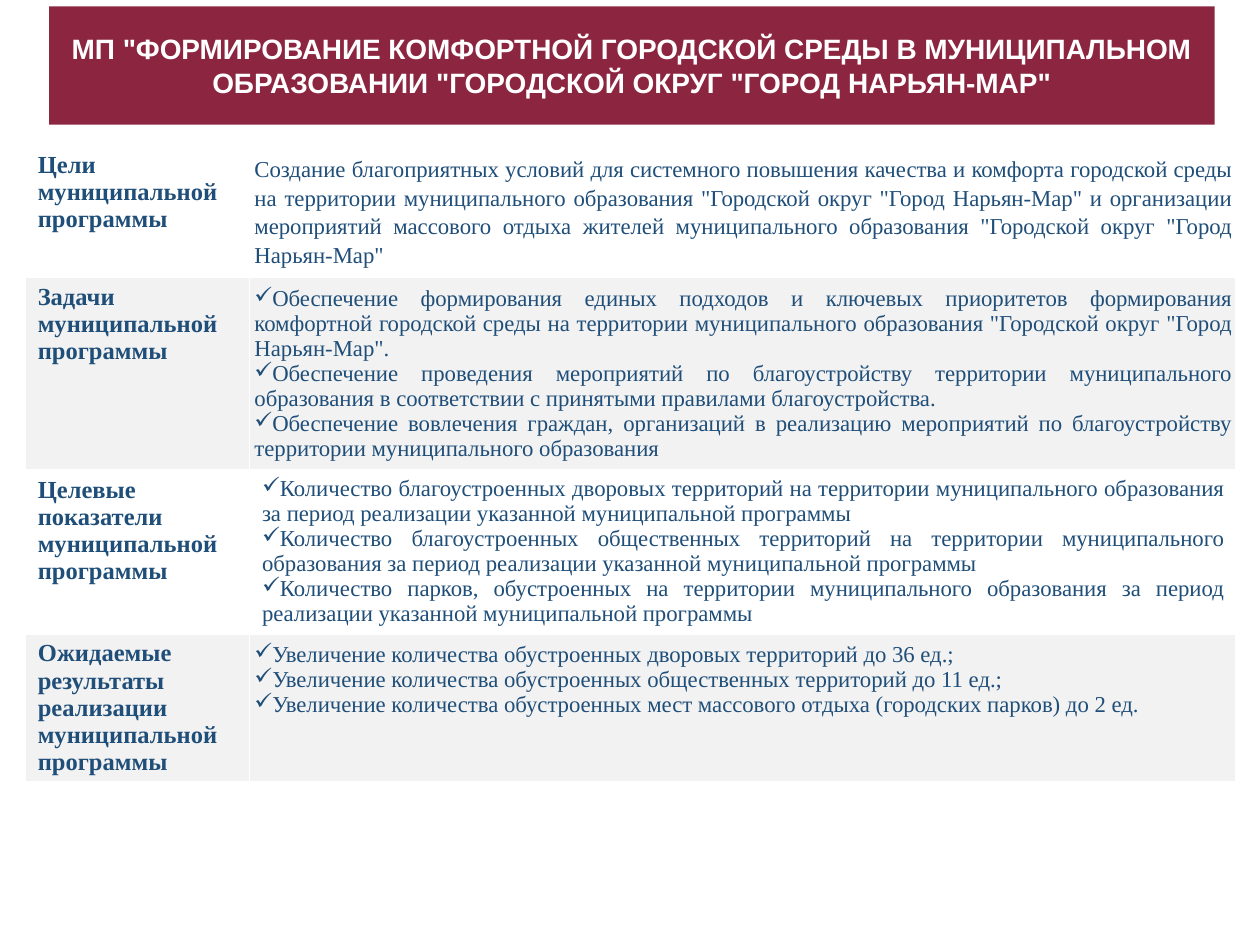
from dataclasses import dataclass

from pptx import Presentation
from pptx.dml.color import RGBColor as RGB
from pptx.enum.text import MSO_ANCHOR as Anchor, MSO_AUTO_SIZE as AutoSize, PP_ALIGN as Align
from pptx.oxml.ns import qn
from pptx.util import Inches, Pt
from lxml.etree import SubElement


@dataclass(frozen=True)
class Theme:
    """Colours, fonts and type sizes of the slide."""
    banner: str = "8C2540"
    white: str = "FFFFFF"
    band: str = "F2F2F2"
    ink: str = "1F4E79"
    title_font: str = "Arial"
    body_font: str = "Times New Roman"
    title_size: int = 16
    label_size: int = 14
    body_size: int = 13
    border: int = 1


class Deck:
    """Holds the theme and the current slide and adds elements to it."""

    def __init__(self, prs, theme):
        """Start a title-only slide."""
        self.theme = theme
        self.s = prs.slides.add_slide(prs.slide_layouts[5])

    def run(self, p, text, font, size, color, bold=False):
        """Add one styled run to a paragraph."""
        r = p.add_run()
        r.text = text
        r.font.name = font
        r.font.size = Pt(size)
        r.font.bold = bold
        r.font.color.rgb = RGB.from_string(color)

    def title(self, text, left, top, width, height):
        """Turn the title placeholder into a filled banner."""
        t = self.theme
        sp = self.s.shapes.title
        sp.left, sp.top, sp.width, sp.height = map(Inches, (left, top, width, height))
        sp.fill.solid()
        sp.fill.fore_color.rgb = RGB.from_string(t.banner)
        tf = sp.text_frame
        tf.word_wrap = True
        tf.auto_size = AutoSize.NONE
        tf.vertical_anchor = Anchor.MIDDLE
        p = tf.paragraphs[0]
        p.alignment = Align.CENTER
        self.run(p, text, t.title_font, t.title_size, t.white, True)

    def borders(self, cell):
        """Draw thin lines on all four sides of a cell."""
        pr = cell._tc.get_or_add_tcPr()
        for i, side in enumerate(("a:lnL", "a:lnR", "a:lnT", "a:lnB")):
            ln = SubElement(pr, qn(side), w=str(Pt(self.theme.border)))
            pr.insert(i, ln)
            fill = SubElement(ln, qn("a:solidFill"))
            SubElement(fill, qn("a:srgbClr"), val=self.theme.white)

    def bullet(self, p):
        """Give a paragraph a check mark with no hanging indent."""
        pr = p._p.get_or_add_pPr()
        pr.set("marL", "0")
        pr.set("indent", "0")
        SubElement(pr, qn("a:buChar"), char="✓")

    def label(self, cell, text):
        """Write the bold heading of a row."""
        t = self.theme
        self.run(cell.text_frame.paragraphs[0], text, t.body_font, t.label_size, t.ink, True)

    def body(self, cell, items, bulleted, tight):
        """Write the justified paragraphs of a row."""
        t = self.theme
        if tight:
            cell.margin_left = cell.margin_right = Inches(0.04)
            cell.margin_top = cell.margin_bottom = Inches(0.07)
        tf = cell.text_frame
        for i, text in enumerate(items):
            p = tf.add_paragraph() if i else tf.paragraphs[0]
            p.alignment = Align.JUSTIFY
            if bulleted:
                self.bullet(p)
            else:
                p.line_spacing = 1.15
            self.run(p, text, t.body_font, t.body_size, t.ink)

    def table(self, rows, left, top, widths, heights):
        """Add the two-column table with alternating row fills."""
        t = self.theme
        size = map(Inches, (left, top, sum(widths), sum(heights)))
        tbl = self.s.shapes.add_table(len(rows), len(widths), *size).table
        for col, width in zip(tbl.columns, widths):
            col.width = Inches(width)
        for i, (row, height, (label, items, bulleted, tight)) in enumerate(zip(tbl.rows, heights, rows)):
            row.height = Inches(height)
            for cell in row.cells:
                cell.fill.solid()
                cell.fill.fore_color.rgb = RGB.from_string(t.band if i % 2 else t.white)
                self.borders(cell)
            self.label(row.cells[0], label)
            self.body(row.cells[1], items, bulleted, tight)


TITLE = ('МП "ФОРМИРОВАНИЕ КОМФОРТНОЙ ГОРОДСКОЙ СРЕДЫ В МУНИЦИПАЛЬНОМ '
         'ОБРАЗОВАНИИ "ГОРОДСКОЙ ОКРУГ "ГОРОД НАРЬЯН-МАР"')

ROWS = [
    ("Цели муниципальной программы", [
        'Создание благоприятных условий для системного повышения качества и комфорта городской среды '
        'на территории муниципального образования "Городской округ "Город Нарьян-Мар" и организации '
        'мероприятий массового отдыха жителей муниципального образования "Городской округ "Город '
        'Нарьян-Мар"',
    ], False, True),
    ("Задачи муниципальной программы", [
        'Обеспечение формирования единых подходов и ключевых приоритетов формирования комфортной '
        'городской среды на территории муниципального образования "Городской округ "Город Нарьян-Мар".',
        "Обеспечение проведения мероприятий по благоустройству территории муниципального образования "
        "в соответствии с принятыми правилами благоустройства.",
        "Обеспечение вовлечения граждан, организаций в реализацию мероприятий по благоустройству "
        "территории муниципального образования",
    ], True, True),
    ("Целевые показатели муниципальной программы", [
        "Количество благоустроенных дворовых территорий на территории муниципального образования "
        "за период реализации указанной муниципальной программы",
        "Количество благоустроенных общественных территорий на территории муниципального образования "
        "за период реализации указанной муниципальной программы",
        "Количество парков, обустроенных на территории муниципального образования за период "
        "реализации указанной муниципальной программы",
    ], True, False),
    ("Ожидаемые результаты реализации муниципальной программы", [
        "Увеличение количества обустроенных дворовых территорий до 36 ед.;",
        "Увеличение количества обустроенных общественных территорий до 11 ед.;",
        "Увеличение количества обустроенных мест массового отдыха (городских парков) до 2 ед.",
    ], True, True),
]


def main():
    """Build the slide and save it."""
    prs = Presentation()
    prs.slide_width, prs.slide_height = Inches(10), Inches(7.5)
    deck = Deck(prs, Theme())
    deck.table(ROWS, 0.2, 1.15, (1.78, 7.83), (1.05, 1.52, 1.3, 1.17))
    deck.title(TITLE, 0.39, 0.05, 9.25, 0.94)
    prs.save("out.pptx")


if __name__ == "__main__":
    main()
